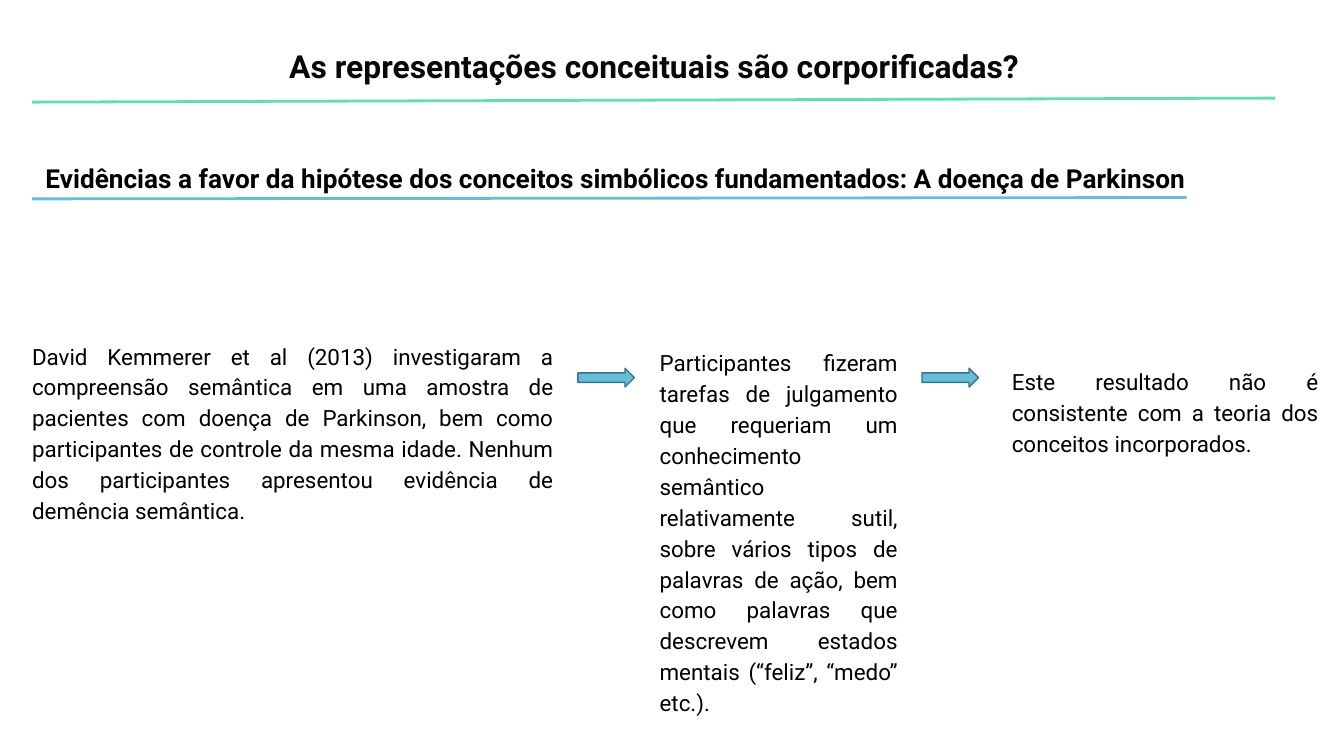
from lxml.etree import SubElement
from pptx import Presentation
from pptx.dml.color import RGBColor
from pptx.enum.shapes import MSO_CONNECTOR, MSO_SHAPE
from pptx.enum.text import MSO_ANCHOR, MSO_AUTO_SIZE, PP_ALIGN
from pptx.oxml.ns import qn
from pptx.util import Inches, Pt

# Content
TITLE = "As representações conceituais são corporificadas?"
SUBTITLE = ("Evidências a favor da hipótese dos conceitos simbólicos "
            "fundamentados: A doença de Parkinson")
# Steps of the argument: text, (left, top, width, height) in inches
STEPS = [
    ("David Kemmerer et al (2013) investigaram a compreensão semântica em uma "
     "amostra de pacientes com doença de Parkinson, bem como participantes de "
     "controle da mesma idade. Nenhum dos participantes apresentou evidência "
     "de demência semântica.", (0.14, 2.42, 4.08, 1.58)),
    ("Participantes fizeram tarefas de julgamento que requeriam um "
     "conhecimento semântico relativamente sutil, sobre vários tipos de "
     "palavras de ação, bem como palavras que descrevem estados mentais "
     "(“feliz”, “medo” etc.).", (4.81, 2.47, 1.97, 2.96)),
    ("Este resultado não é consistente com a teoria dos conceitos "
     "incorporados.", (7.43, 2.61, 2.48, 1.1)),
]
SLIDE_WIDTH = 10
SLIDE_HEIGHT = SLIDE_WIDTH * 9 / 16
MARGIN = 0.24
# Rules: right end, start height, end height, colour
RULES = [(9.49, 0.76, 0.73, "64DEAE"), (8.83, 1.48, 1.47, "67BCD6")]
ARROW_TOP, ARROW_WIDTH, ARROW_HEIGHT = 2.74, 0.42, 0.14
ARROW_GAP = 0.08  # from the end of a step to its arrow


def color(hex_value):
    return RGBColor.from_string(hex_value)


def box(*lengths):
    return [Inches(length) for length in lengths]


def write(shape, text, size, bold=False, ink="000000", align=PP_ALIGN.JUSTIFY,
          anchor=MSO_ANCHOR.TOP, spacing=1.15):
    frame = shape.text_frame
    frame.text = text
    frame.word_wrap = True
    frame.auto_size = MSO_AUTO_SIZE.NONE
    frame.vertical_anchor = anchor
    frame.margin_left = frame.margin_right = Inches(0.1)
    frame.margin_top = frame.margin_bottom = Inches(0.1)
    paragraph = frame.paragraphs[0]
    paragraph.alignment = align
    paragraph.line_spacing = spacing
    font = paragraph.font
    font.name, font.size, font.bold = "Roboto", Pt(size), bold
    font.color.rgb = color(ink)


deck = Presentation()
deck.slide_width, deck.slide_height = box(SLIDE_WIDTH, SLIDE_HEIGHT)
slide = deck.slides.add_slide(deck.slide_layouts[5])
shapes = slide.shapes

# Title and subtitle
title = shapes.title
title.left, title.top, title.width, title.height = box(0, 0.25, 9.74, 0.76)
write(title, TITLE, 17, bold=True, ink="080808", align=PP_ALIGN.CENTER, spacing=1.0)
subtitle = shapes.add_textbox(*box(MARGIN, 1.01, 9.34, 0.6))
write(subtitle, SUBTITLE, 14, bold=True, anchor=MSO_ANCHOR.MIDDLE)

# Rules below the headings
for right, start, end, ink in RULES:
    rule = shapes.add_connector(MSO_CONNECTOR.STRAIGHT, *box(MARGIN, start, right, end))
    rule.line.color.rgb = color(ink)
    rule.line.width = Pt(1.5)
    SubElement(rule._element.spPr, qn("a:effectLst"))

# Steps, with an arrow after each but the last
for number, (text, place) in enumerate(STEPS, 1):
    write(shapes.add_textbox(*box(*place)), text, 12)
    if number < len(STEPS):
        left, _, width, _ = place
        arrow = shapes.add_shape(
            MSO_SHAPE.RIGHT_ARROW,
            *box(left + width + ARROW_GAP, ARROW_TOP, ARROW_WIDTH, ARROW_HEIGHT))
        arrow.shadow.inherit = False
        arrow.fill.solid()
        arrow.fill.fore_color.rgb = color("67BCD6")
        arrow.line.color.rgb = color("337291")
        arrow.line.width = Pt(0.75)

deck.save("out.pptx")
